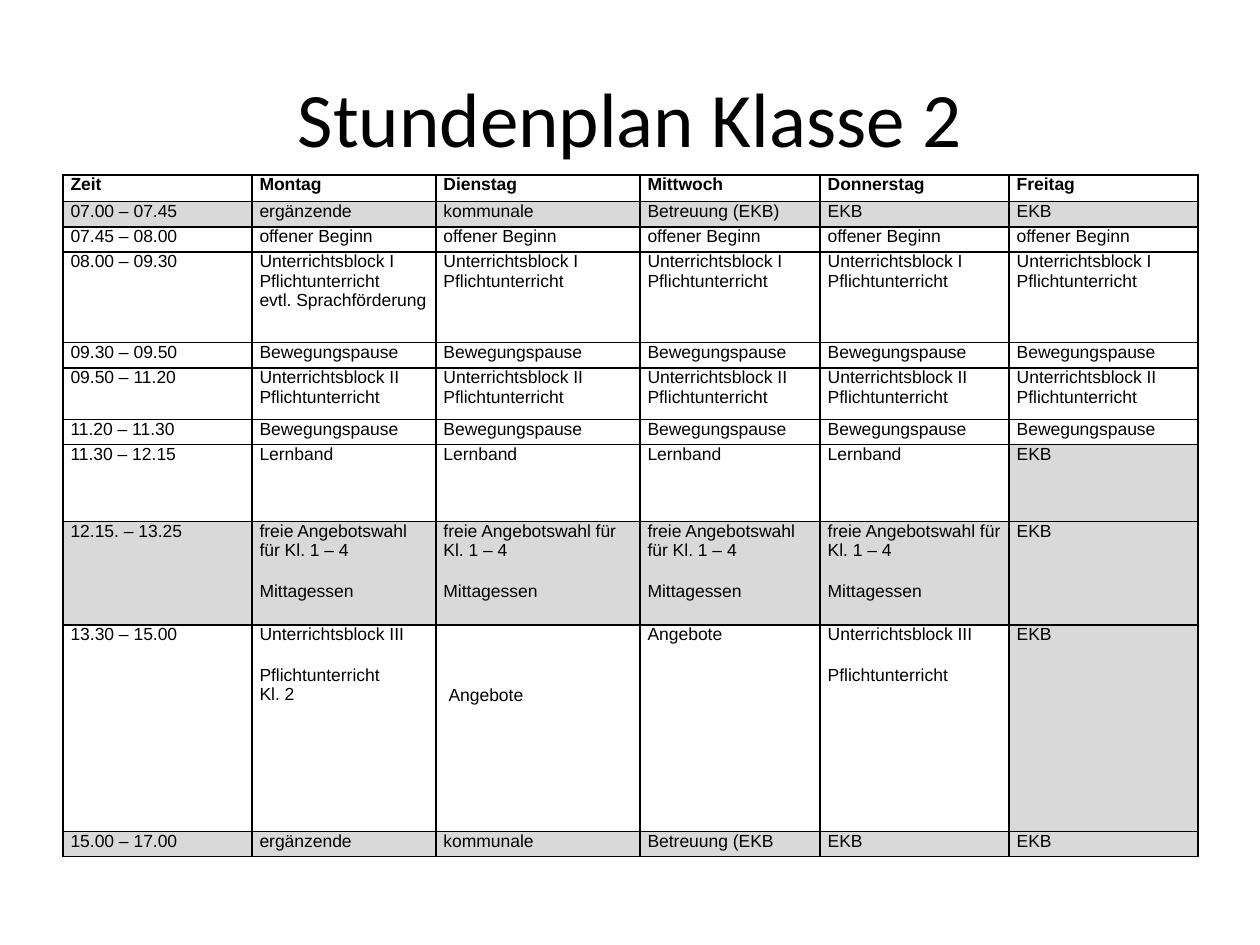
"""Build the weekly timetable slide for class 2."""
from dataclasses import dataclass

from lxml import etree
from pptx import Presentation
from pptx.dml.color import RGBColor
from pptx.enum.text import MSO_ANCHOR, PP_ALIGN
from pptx.oxml.ns import qn
from pptx.util import Inches, Pt

CENTER = PP_ALIGN.CENTER
MIDDLE = MSO_ANCHOR.MIDDLE
BORDER_TAGS = ("a:lnL", "a:lnR", "a:lnT", "a:lnB")


@dataclass(frozen=True)
class Theme:
    ink: str = "000000"
    shade: str = "D9D9D9"
    title_font: str = "Calibri"
    table_font: str = "Arial"
    title_size: int = 44
    table_size: int = 10
    border_width: int = 1
    paragraph_gap: int = 6
    side_margin: float = 0.06


@dataclass(frozen=True)
class Period:
    height: float
    texts: tuple[str, ...]
    shade_from: int = 6
    gap: int = 6
    bold: bool = False


THEME = Theme()
COLUMN_WIDTHS = (1.5, 1.46, 1.62, 1.43, 1.5, 1.5)
BLOCK_ONE = "Unterrichtsblock I\nPflichtunterricht"
BLOCK_TWO = "Unterrichtsblock II Pflichtunterricht"
BLOCK_THREE = "Unterrichtsblock III\nPflichtunterricht"
FREE_CHOICE = "freie Angebotswahl für Kl. 1 – 4\nMittagessen"
BREAK = ("Bewegungspause",) * 5
CARE = ("ergänzende", "kommunale")
LOWERED_CELL = (9, 2)

PERIODS = (
    Period(0.21, ("Zeit", "Montag", "Dienstag", "Mittwoch", "Donnerstag", "Freitag"), bold=True),
    Period(0.2, ("07.00 – 07.45", *CARE, "Betreuung (EKB)", "EKB", "EKB"), shade_from=0),
    Period(0.2, ("07.45 – 08.00", *("offener Beginn",) * 5)),
    Period(0.72, ("08.00 – 09.30", BLOCK_ONE + "\nevtl. Sprachförderung", *(BLOCK_ONE,) * 4), gap=0),
    Period(0.2, ("09.30 – 09.50", *BREAK)),
    Period(0.41, ("09.50 – 11.20", *(BLOCK_TWO,) * 5)),
    Period(0.2, ("11.20 – 11.30", *BREAK)),
    Period(0.61, ("11.30 – 12.15", *("Lernband",) * 4, "EKB"), shade_from=5),
    Period(0.82, ("12.15. – 13.25", *(FREE_CHOICE,) * 4, "EKB"), shade_from=0),
    Period(1.64, ("13.30 – 15.00", BLOCK_THREE + "\vKl. 2", "Angebote", "Angebote",
                  BLOCK_THREE, "EKB"), shade_from=5),
    Period(0.2, ("15.00 – 17.00", *CARE, "Betreuung (EKB", "EKB", "EKB"), shade_from=0),
)


def style_font(font, name: str, size: int, bold: bool = False) -> None:
    """Apply the theme ink with the given typeface."""
    font.name = name
    font.size = Pt(size)
    font.bold = bold
    font.color.rgb = RGBColor.from_string(THEME.ink)


def add_title(page, text: str) -> None:
    """Place the centred slide title."""
    box = page.shapes.add_textbox(Inches(0.5), Inches(0.3), Inches(9), Inches(1.25))
    frame = box.text_frame
    frame.word_wrap = True
    frame.vertical_anchor = MIDDLE
    frame.text = text
    para = frame.paragraphs[0]
    para.alignment = CENTER
    style_font(para.runs[0].font, THEME.title_font, THEME.title_size)


def add_borders(cell) -> None:
    """Draw a solid line on all four sides of a cell."""
    properties = cell._tc.get_or_add_tcPr()
    for tag in BORDER_TAGS:
        line = etree.SubElement(properties, qn(tag), w=str(Pt(THEME.border_width)))
        fill = etree.SubElement(line, qn("a:solidFill"))
        etree.SubElement(fill, qn("a:srgbClr"), val=THEME.ink)


def fill_cell(cell, text: str, period: Period, shaded: bool) -> None:
    """Write and format one timetable cell."""
    cell.margin_left = cell.margin_right = Inches(THEME.side_margin)
    cell.margin_top = cell.margin_bottom = 0
    add_borders(cell)
    if shaded:
        cell.fill.solid()
        cell.fill.fore_color.rgb = RGBColor.from_string(THEME.shade)
    else:
        cell.fill.background()
    cell.text_frame.text = text
    for para in cell.text_frame.paragraphs:
        para.space_before = para.space_after = Pt(period.gap)
        for span in para.runs:
            style_font(span.font, THEME.table_font, THEME.table_size, period.bold)


def add_timetable(page) -> None:
    """Build the timetable from the list of periods."""
    height = sum(period.height for period in PERIODS)
    frame = page.shapes.add_table(len(PERIODS), len(COLUMN_WIDTHS), Inches(0.5), Inches(1.39),
                                  Inches(sum(COLUMN_WIDTHS)), Inches(height))
    table = frame.table
    table.first_row = table.horz_banding = False
    for column, width in zip(table.columns, COLUMN_WIDTHS):
        column.width = Inches(width)
    for row, period in zip(table.rows, PERIODS):
        row.height = Inches(period.height)
        for index, (cell, text) in enumerate(zip(row.cells, period.texts)):
            fill_cell(cell, text, period, index >= period.shade_from)
    lowered = table.cell(*LOWERED_CELL)
    lowered.margin_top = Inches(0.48)
    lowered.margin_left = Inches(0.1)


def main() -> None:
    """Create and save the deck."""
    deck = Presentation()
    deck.slide_width, deck.slide_height = Inches(10), Inches(7.5)
    page = deck.slides.add_slide(deck.slide_layouts[6])
    add_title(page, "Stundenplan Klasse 2")
    add_timetable(page)
    deck.save("out.pptx")


if __name__ == "__main__":
    main()
